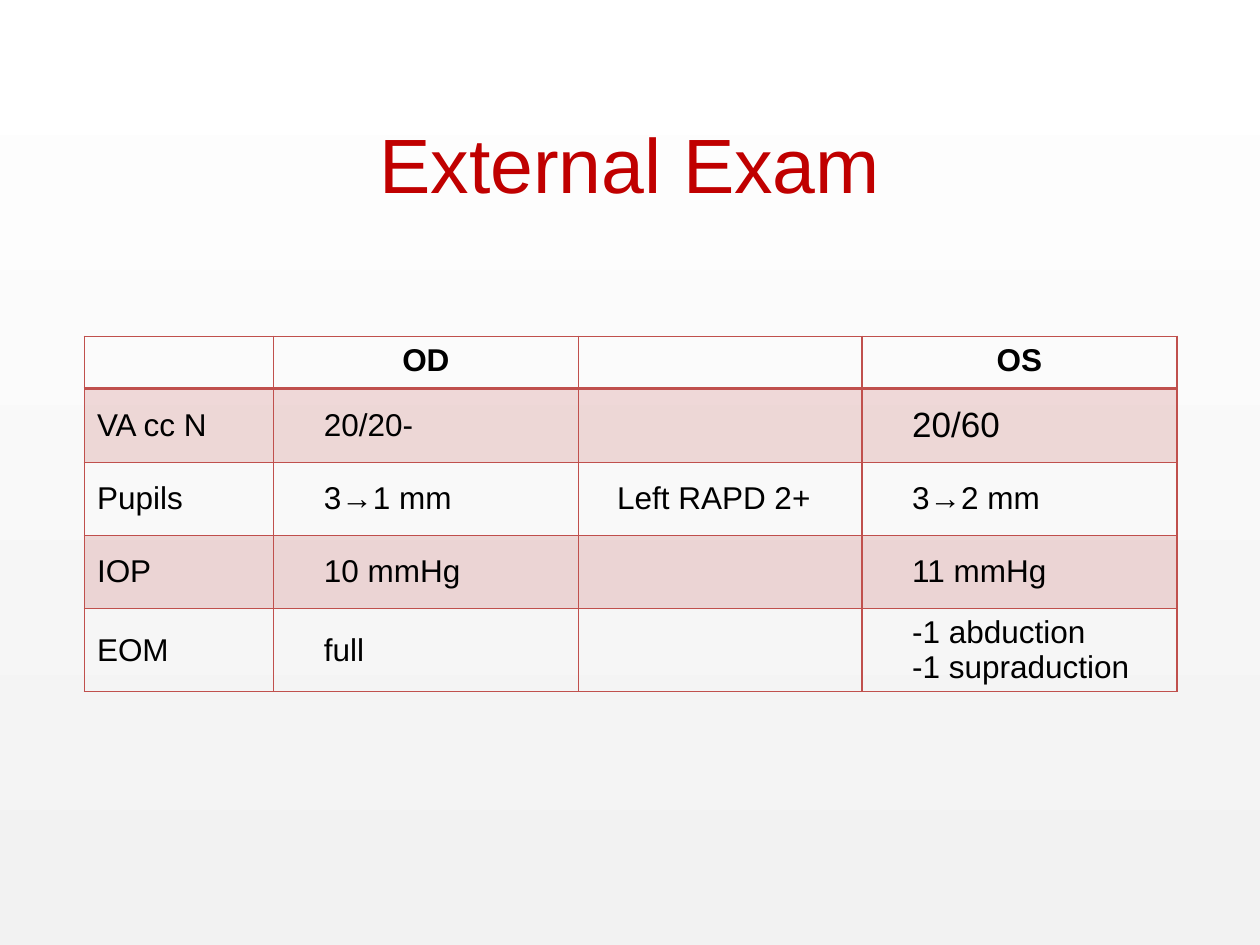
from lxml.etree import SubElement
from pptx import Presentation
from pptx.dml.color import RGBColor
from pptx.enum.text import MSO_ANCHOR, PP_ALIGN
from pptx.oxml import parse_xml
from pptx.oxml.ns import nsdecls, qn
from pptx.util import Inches, Pt

WHITE = RGBColor(0xFF, 0xFF, 0xFF)
PALE_GRAY = RGBColor(0xF2, 0xF2, 0xF2)
BLACK = RGBColor(0, 0, 0)
TITLE_RED = RGBColor(0xC0, 0, 0)
TABLE_RED = RGBColor(0xC0, 0x50, 0x4D)
FONT = "Arial"

COLUMN_WIDTHS = [1.5, 2.42, 2.25, 2.5]
ROW_HEIGHTS = [0.41, 0.59, 0.58, 0.58, 0.58]
EXAM = [
    ["", "OD", "", "OS"],
    ["VA cc N", "20/20-", "", "20/60"],
    ["Pupils", "3→1 mm", "Left RAPD 2+", "3→2 mm"],
    ["IOP", "10 mmHg", "", "11 mmHg"],
    ["EOM", "full", "", "-1 abduction\n-1 supraduction"],
]
LEFT_INSETS = [0.1, 0.4, 0, 0.4]


def add_border(cell, position, side, points):
    """Draw one side of a cell; position is its place among the borders."""
    border = parse_xml(
        f'<a:{side} {nsdecls("a")} w="{Pt(points)}"><a:solidFill>'
        f'<a:srgbClr val="{TABLE_RED}"/></a:solidFill></a:{side}>'
    )
    cell._tc.get_or_add_tcPr().insert(position, border)


deck = Presentation()
deck.slide_width, deck.slide_height = Inches(10), Inches(7.5)
page = deck.slides.add_slide(deck.slide_layouts[5])

backdrop = page.background.fill
backdrop.gradient()
backdrop.gradient_angle = 90
for stop, color in zip(backdrop.gradient_stops, (PALE_GRAY, WHITE)):
    stop.color.rgb = color

grid = page.shapes.add_table(
    len(ROW_HEIGHTS), len(COLUMN_WIDTHS), Inches(0.67), Inches(2.67),
    Inches(sum(COLUMN_WIDTHS)), Inches(sum(ROW_HEIGHTS)),
).table
grid.first_row = False
grid.horz_banding = False
for column, width in zip(grid.columns, COLUMN_WIDTHS):
    column.width = Inches(width)
for row, height in zip(grid.rows, ROW_HEIGHTS):
    row.height = Inches(height)

for r, texts in enumerate(EXAM):
    for c, text in enumerate(texts):
        cell = grid.cell(r, c)
        cell.text = text
        header = r == 0
        if not header:
            cell.vertical_anchor = MSO_ANCHOR.MIDDLE
            cell.margin_left = Inches(LEFT_INSETS[c])
        for para in cell.text_frame.paragraphs:
            para.alignment = PP_ALIGN.CENTER if header or c == 2 else PP_ALIGN.LEFT
            para.font.name = FONT
            para.font.size = Pt(20 if text == "20/60" else 18)
            para.font.bold = header
            para.font.color.rgb = BLACK

        if r % 2:
            cell.fill.solid()
            cell.fill.fore_color.rgb = TABLE_RED
            tint = cell._tc.tcPr.find(".//" + qn("a:srgbClr"))
            SubElement(tint, qn("a:alpha"), val="20000")
        else:
            cell.fill.background()
        top, bottom = (2 if r == 1 else 1), (2 if header else 1)
        sides = {"lnL": 1, "lnR": 1, "lnT": top, "lnB": bottom}
        for position, (side, points) in enumerate(sides.items()):
            add_border(cell, position, side, points)

title = page.shapes.title
title.left, title.top = Inches(0.5), Inches(0.67)
title.width, title.height = Inches(9), Inches(1.25)
title.text_frame.text = "External Exam"
title.text_frame.vertical_anchor = MSO_ANCHOR.MIDDLE
heading = title.text_frame.paragraphs[0]
heading.alignment = PP_ALIGN.CENTER
heading.font.name = FONT
heading.font.size = Pt(44)
heading.font.color.rgb = TITLE_RED

deck.save("out.pptx")
